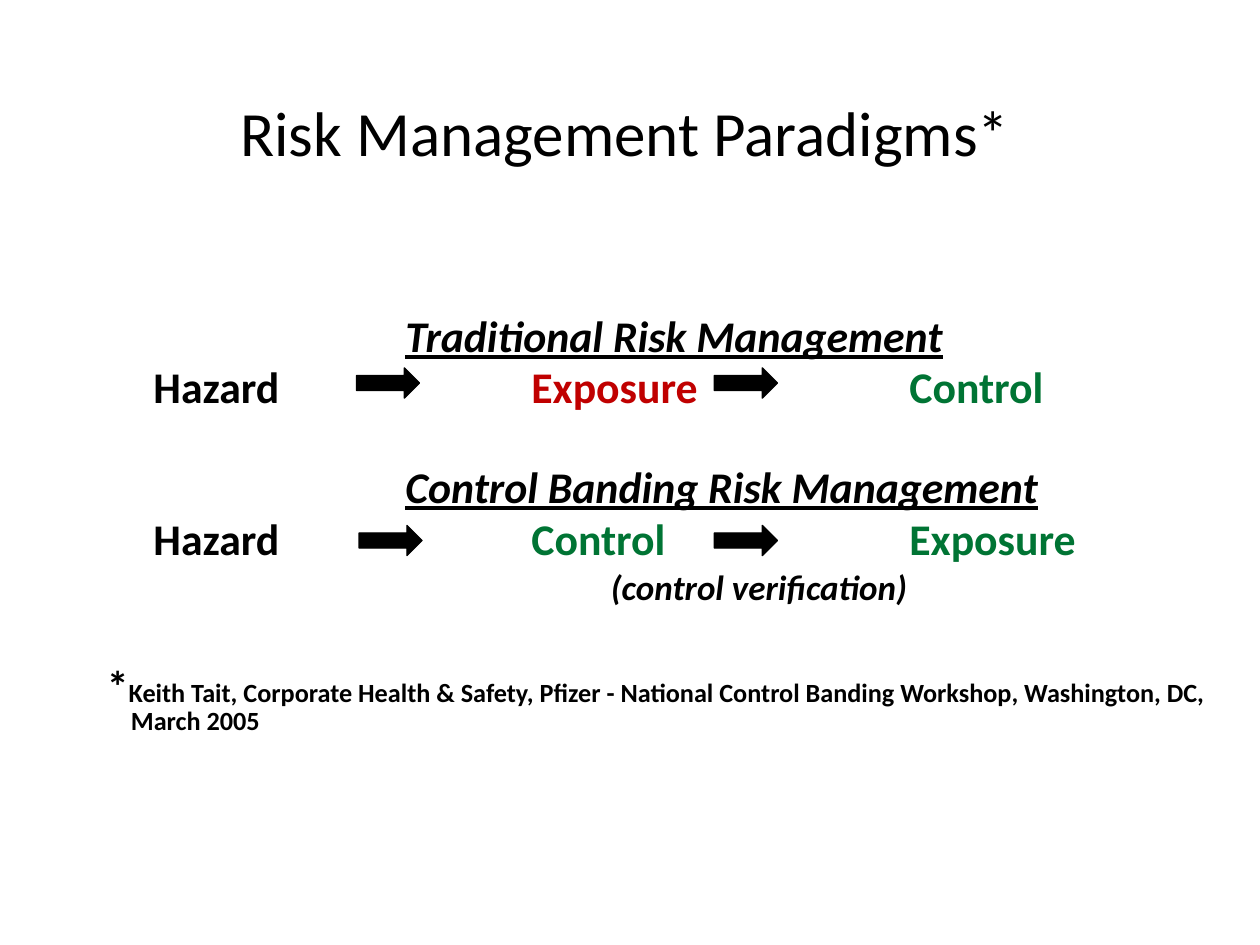
from pptx import Presentation
from pptx.dml.color import RGBColor
from pptx.enum import shapes, text
from pptx.util import Inches, Pt


def rgb(value):
    return RGBColor.from_string(value)


def add_text(x, y, width, height, content, size, color="000000", bold=True):
    sp = s.shapes.add_textbox(Inches(x), Inches(y), Inches(width), Inches(height))
    tf = sp.text_frame
    tf.word_wrap = True
    p = tf.paragraphs[0]
    if content:
        p.text = content
    p.line_spacing = 0.8
    p.font.name = "Calibri"
    p.font.size = Pt(size)
    p.font.bold = bold
    p.font.color.rgb = rgb(color)
    return p, tf


prs = Presentation()
prs.slide_width, prs.slide_height = Inches(10), Inches(7.5)
s = prs.slides.add_slide(prs.slide_layouts[6])

p, tf = add_text(0.25, 0.42, 9.42, 1.25, "Risk Management Paradigms*", 36, bold=False)
tf.vertical_anchor = text.MSO_ANCHOR.MIDDLE
p.alignment = text.PP_ALIGN.CENTER
p.line_spacing = 1.0

paradigms = [
    ("Traditional Risk Management", (2.83, 5.67),
     [("Hazard", "000000"), ("Exposure", "C00000"), ("Control", "007434")]),
    ("Control Banding Risk Management", (2.85, 5.67),
     [("Hazard", "000000"), ("Control", "007434"), ("Exposure", "007434")]),
]
for row, (heading, arrows, steps) in enumerate(paradigms):
    y = 2.48 + 1.2 * row
    p, tf = add_text(3.12, y, 6, 0.42, heading, 25)
    p.font.italic = True
    p.font.underline = True

    for column, (step, color) in enumerate(steps):
        add_text(1.12 + 3 * column, y + 0.41, 2, 0.42, step, 25, color)

    for x in arrows:
        sp = s.shapes.add_shape(shapes.MSO_SHAPE.RIGHT_ARROW, Inches(x),
                                Inches(2.92 + 1.25 * row), Inches(0.5), Inches(0.24))
        sp.shadow.inherit = False
        sp.fill.solid()
        sp.fill.fore_color.rgb = rgb("000000")
        sp.line.color.rgb = rgb("000000")
        sp.line.width = Pt(0.75)

p, tf = add_text(4.75, 4.5, 3, 0.36, "(control verification)", 20)
p.font.italic = True

p, tf = add_text(0.75, 5.26, 9.08, 0.7, "", 15)
pPr = p._p.get_or_add_pPr()
pPr.set("marL", str(Inches(0.19)))
pPr.set("indent", str(-Inches(0.19)))
r = p.add_run()
r.text = "*"
r.font.size = Pt(25)
r = p.add_run()
r.text = ("Keith Tait, Corporate Health & Safety, Pfizer - National Control "
          "Banding Workshop, Washington, DC, March 2005")

prs.save("out.pptx")
